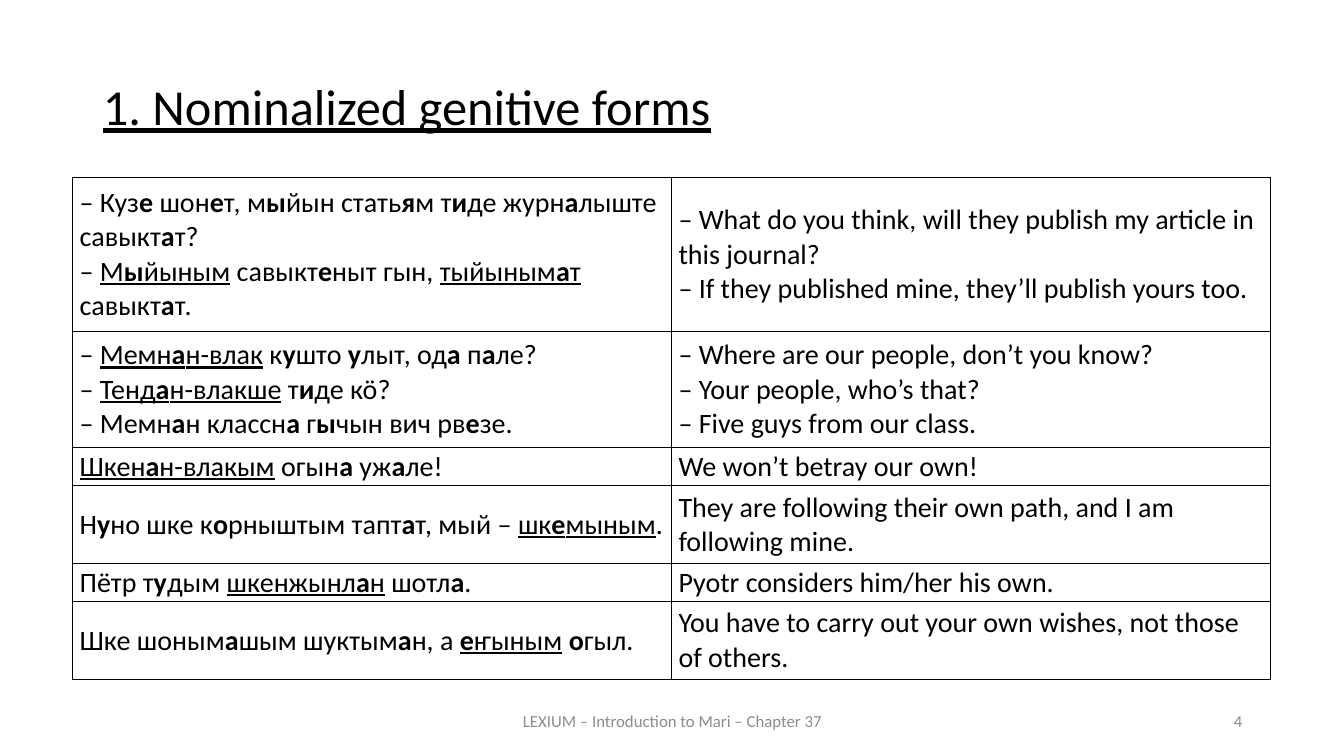
from dataclasses import dataclass

from lxml import etree
from pptx import Presentation
from pptx.dml.color import RGBColor
from pptx.enum.text import MSO_ANCHOR, MSO_AUTO_SIZE, PP_ALIGN
from pptx.oxml.ns import qn
from pptx.util import Inches, Pt

TOP, MIDDLE = MSO_ANCHOR.TOP, MSO_ANCHOR.MIDDLE
LEFT, CENTER = PP_ALIGN.LEFT, PP_ALIGN.CENTER
RIGHT, JUSTIFY = PP_ALIGN.RIGHT, PP_ALIGN.JUSTIFY
NO_AUTOFIT = MSO_AUTO_SIZE.NONE
TITLE_ONLY = 5


@dataclass(frozen=True)
class Theme:
    font: str = "Calibri"
    ink: str = "000000"
    muted: str = "8C8C8C"
    title_size: int = 36
    table_size: int = 20
    footer_size: int = 12
    border_width: int = 1


THEME = Theme()

COLUMN_WIDTH = 5.94
CELL_MARGIN = 0.07

# Each row: height, Mari lines, English lines.
# *...* marks the stressed vowel (bold), _..._ the nominalized form (underlined).
EXAMPLES = [
    (1.53,
     ["– Куз*е* шон*е*т, м*ы*йын стать*я*м т*и*де журн*а*лыште савыкт*а*т?",
      "– _М*ы*йыным_ савыкт*е*ныт гын, _тыйыным*а*т_ савыкт*а*т."],
     ["– What do you think, will they publish my article in this journal?",
      "– If they published mine, they’ll publish yours too."]),
    (1.15,
     ["– _Мемн*а*н-влак_ к*у*што *у*лыт, од*а *п*а*ле?",
      "– _Тенд*а*н-влакше_ т*и*де кӧ?",
      "– Мемн*а*н классн*а *г*ы*чын вич рв*е*зе."],
     ["– Where are our people, don’t you know?",
      "– Your people, who’s that?",
      "– Five guys from our class."]),
    (0.38,
     ["_Шкен*а*н-влакым_ огын*а* уж*а*ле!"],
     ["We won’t betray our own!"]),
    (0.77,
     ["Н*у*но шке к*о*рныштым тапт*а*т, мый – _шк*е*мыным_."],
     ["They are following their own path, and I am following mine."]),
    (0.38,
     ["Пётр т*у*дым _шкенжынл*а*н_ шотл*а*."],
     ["Pyotr considers him/her his own."]),
    (0.77,
     ["Шке шоным*а*шым шуктым*а*н, а _*е*ҥыным_ *о*гыл."],
     ["You have to carry out your own wishes, not those of others."]),
]


def add_run(paragraph, text, size, color, bold=False, underline=False):
    run = paragraph.add_run()
    run.text = text
    font = run.font
    font.name = THEME.font
    font.size = Pt(size)
    font.color.rgb = RGBColor.from_string(color)
    font.bold = bold
    font.underline = underline


def add_marked_runs(paragraph, marked):
    """Split on _ and *, toggling underline and bold at each mark."""
    for i, stretch in enumerate(marked.split("_")):
        for j, text in enumerate(stretch.split("*")):
            if text:
                add_run(paragraph, text, THEME.table_size, THEME.ink,
                        bold=j % 2 == 1, underline=i % 2 == 1)


def set_title(slide, text):
    title = slide.shapes.title
    title.left, title.top = Inches(0.92), Inches(0.76)
    title.width, title.height = Inches(11.5), Inches(0.83)
    frame = title.text_frame
    frame.auto_size = NO_AUTOFIT
    frame.word_wrap = True
    frame.vertical_anchor = TOP
    paragraph = frame.paragraphs[0]
    paragraph.alignment = JUSTIFY
    paragraph.line_spacing = 0.9
    paragraph.space_before = Pt(12)
    add_run(paragraph, text, THEME.title_size, THEME.ink, underline=True)


def add_footer(slide, text, left, width, alignment):
    box = slide.shapes.add_textbox(
        Inches(left), Inches(6.95), Inches(width), Inches(0.4))
    frame = box.text_frame
    frame.word_wrap = True
    frame.vertical_anchor = MIDDLE
    paragraph = frame.paragraphs[0]
    paragraph.alignment = alignment
    add_run(paragraph, text, THEME.footer_size, THEME.muted)


def add_borders(cell):
    properties = cell._tc.get_or_add_tcPr()
    for side in ("a:lnL", "a:lnR", "a:lnT", "a:lnB"):
        line = etree.SubElement(properties, qn(side),
                                w=str(Pt(THEME.border_width)))
        fill = etree.SubElement(line, qn("a:solidFill"))
        etree.SubElement(fill, qn("a:srgbClr"), val=THEME.ink)


def fill_cell(cell, lines):
    add_borders(cell)
    cell.fill.background()
    cell.vertical_anchor = MIDDLE
    cell.margin_left = cell.margin_right = Inches(CELL_MARGIN)
    cell.margin_top = cell.margin_bottom = 0
    frame = cell.text_frame
    for i, line in enumerate(lines):
        paragraph = frame.add_paragraph() if i else frame.paragraphs[0]
        paragraph.alignment = LEFT
        add_marked_runs(paragraph, line)


def add_examples(slide):
    total_height = sum(height for height, _, _ in EXAMPLES)
    table = slide.shapes.add_table(
        len(EXAMPLES), 2, Inches(0.72), Inches(1.76),
        Inches(2 * COLUMN_WIDTH), Inches(total_height)).table
    table.first_row = table.horz_banding = False
    for column in table.columns:
        column.width = Inches(COLUMN_WIDTH)
    for i, (height, mari, english) in enumerate(EXAMPLES):
        table.rows[i].height = Inches(height)
        fill_cell(table.cell(i, 0), mari)
        fill_cell(table.cell(i, 1), english)


def main():
    presentation = Presentation()
    presentation.slide_width = Inches(13.33)
    presentation.slide_height = Inches(7.5)
    slide = presentation.slides.add_slide(
        presentation.slide_layouts[TITLE_ONLY])
    set_title(slide, "1. Nominalized genitive forms")
    add_examples(slide)
    add_footer(slide, "LEXIUM – Introduction to Mari – Chapter 37",
               4.42, 4.5, CENTER)
    add_footer(slide, "4", 9.42, 3, RIGHT)
    presentation.save("out.pptx")


if __name__ == "__main__":
    main()
